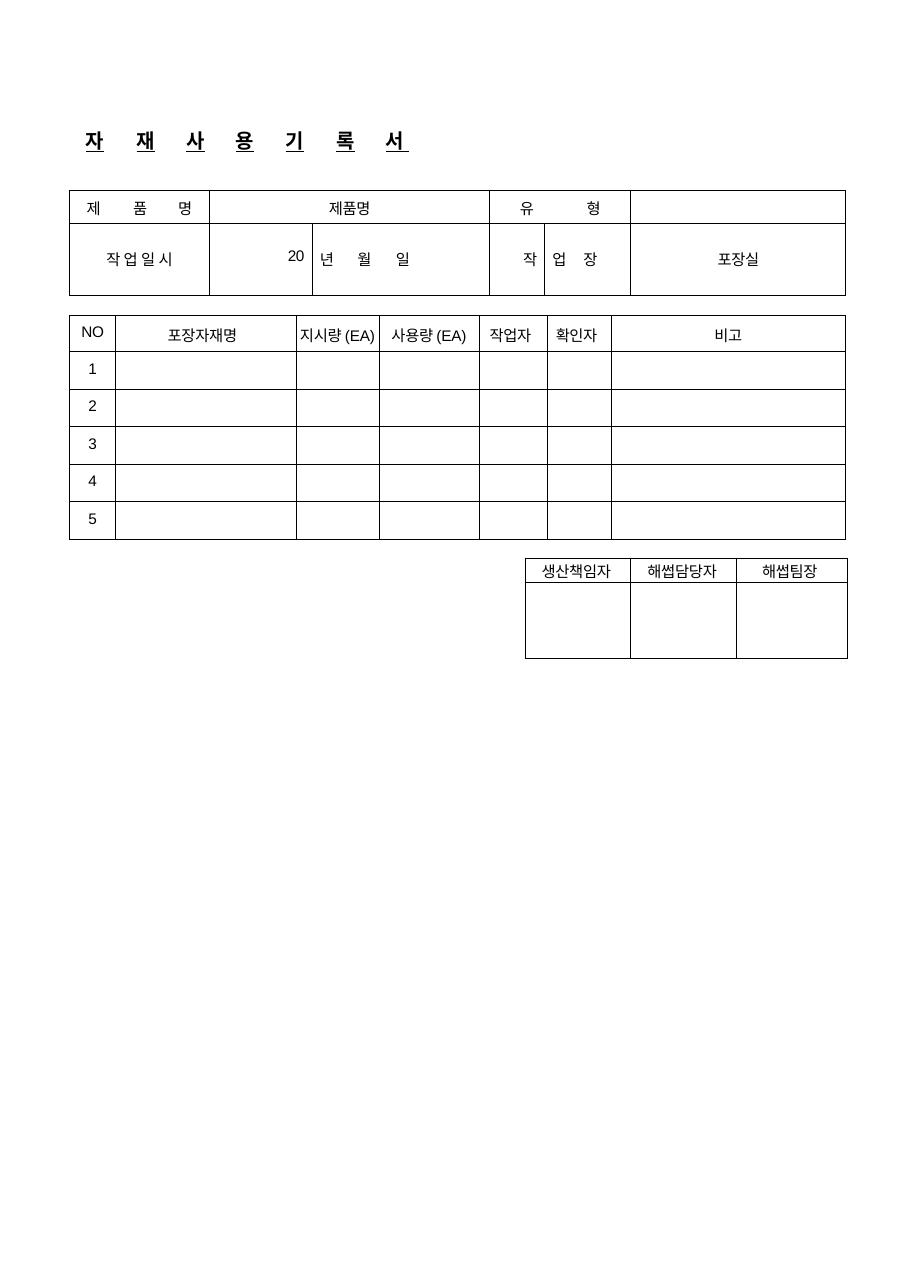
from dataclasses import dataclass

from lxml.etree import SubElement
from pptx import Presentation
from pptx.dml.color import RGBColor
from pptx.enum.text import MSO_AUTO_SIZE as AutoSize, PP_ALIGN as Align
from pptx.oxml import parse_xml
from pptx.oxml.ns import nsdecls, qn
from pptx.util import Emu, Pt

PX = 9144  # 100 px to the inch
LATIN, KOREAN = "Arial", "Noto Sans CJK KR"
BLACK = "000000"


def px(length):
    return Emu(length * PX)


def colour(value):
    return RGBColor.from_string(value)


@dataclass
class Label:
    """Text of a cell; "|" separates runs, and indent is on the aligned side."""
    text: str = ""
    align: Align = Align.CENTER
    indent: int = 0
    spacing: float = -0.2
    tabs: tuple = ()


def left(text, indent, spacing=-0.5):
    return Label(text, Align.LEFT, indent, spacing)


def right(text, indent, spacing=-0.5):
    return Label(text, Align.RIGHT, indent, spacing)


class Form:
    def __init__(self, width, height):
        self.deck = Presentation()
        self.deck.slide_width, self.deck.slide_height = px(width), px(height)
        self.page = self.deck.slides.add_slide(self.deck.slide_layouts[6])

    def style_span(self, span, size, spacing, bold=None, underline=None):
        font = span.font
        font.size, font.bold, font.underline = Pt(size), bold, underline
        font.color.rgb = colour(BLACK)
        font.name = LATIN if span.text.strip() and span.text.isascii() else KOREAN
        properties = font._element
        properties.set("spc", str(round(spacing * 100)))
        SubElement(properties, qn("a:ea")).set("typeface", KOREAN)

    def set_tabs(self, para, stops):
        tab_list = SubElement(para._p.get_or_add_pPr(), qn("a:tabLst"))
        for stop in stops:
            tab = SubElement(tab_list, qn("a:tab"))
            tab.set("pos", str(px(stop)))
            tab.set("algn", "l")

    def add_title(self, at, letters, stops):
        box = self.page.shapes.add_textbox(*map(px, at))
        frame = box.text_frame
        frame.word_wrap, frame.auto_size = True, AutoSize.SHAPE_TO_FIT_TEXT
        frame.margin_left = frame.margin_top = px(1)
        frame.margin_right = frame.margin_bottom = 0
        para = frame.paragraphs[0]
        self.set_tabs(para, stops)
        for part in "|\t|".join(letters).split("|") + [" "]:
            span = para.add_run()
            span.text = part
            spacing = {"\t": 0, " ": 5}.get(part, -0.5)
            self.style_span(span, 13, spacing, True, part != "\t")

    def fill_cell(self, cell, label, top):
        cell.margin_left = px(label.indent if label.align == Align.LEFT else 0)
        cell.margin_right = px(label.indent if label.align == Align.RIGHT else 0)
        cell.margin_top, cell.margin_bottom = px(top), 0
        para = cell.text_frame.paragraphs[0]
        if not label.text:
            SubElement(para._p, qn("a:endParaRPr")).set("sz", "1000")
            return
        para.alignment = label.align
        if label.tabs:
            self.set_tabs(para, label.tabs)
        for part in label.text.split("|"):
            span = para.add_run()
            span.text = part
            self.style_span(span, 10, label.spacing)

    def set_borders(self, cell, weight, hidden_sides):
        properties = cell._tc.get_or_add_tcPr()
        for index, side in enumerate("LRTB"):
            paint = ("<a:noFill/>" if side in hidden_sides else
                     f'<a:solidFill><a:srgbClr val="{BLACK}"/></a:solidFill>')
            properties.insert(index, parse_xml(
                f'<a:ln{side} {nsdecls("a")} w="{Pt(weight)}">{paint}</a:ln{side}>'))

    def add_grid(self, corner, widths, heights, rows, tops, weight=0.5,
                 merges=(), open_right=()):
        """open_right lists the (row, column) cells with no line on their right."""
        size = sum(widths), sum(heights)
        table = self.page.shapes.add_table(
            len(heights), len(widths), *map(px, (*corner, *size))).table
        table.first_row = table.horz_banding = False
        for column, width in zip(table.columns, widths):
            column.width = px(width)
        for row, height in zip(table.rows, heights):
            row.height = px(height)
        for first, last in merges:
            table.cell(*first).merge(table.cell(*last))
        for r, (labels, top) in enumerate(zip(rows, tops)):
            for c, label in enumerate(labels):
                cell = table.cell(r, c)
                cell.fill.background()
                self.fill_cell(cell, label, top)
                hidden = "R" * ((r, c) in open_right) + "L" * ((r, c - 1) in open_right)
                self.set_borders(cell, weight, hidden)


def main():
    form = Form(826, 1168)
    form.add_title((77, 116, 300, 24), "자재사용기록서", (46, 91, 136, 181, 227, 272))

    blank = Label()
    product = [Label("제\t품\t명", spacing=-0.5, tabs=(42, 83)), Label("제품명"),
               blank, blank, blank, right("유", 10), blank, left("형", 10), blank]
    work = [Label("작 업 일 |시", spacing=0), right("20", 7, -0.2), left("년", 7),
            left("월", 10), left("일", 10), right("작", 7), left("업", 7),
            left("장", 7), Label("포장실")]
    form.add_grid((63, 173), (127, 93, 31, 35, 95, 50, 28, 50, 195), (30, 65),
                  [product, work], tops=(6, 22), weight=0.75,
                  merges=[((0, 1), (0, 4))],
                  open_right={(0, 5), (0, 6), (1, 2), (1, 3), (1, 6)})

    headings = [Label("NO"), left("포장자재명", 47, -0.1),
                left("지시량 |(EA)", 3, -0.1), left("사용량 |(EA)", 11, -0.1),
                left("작업자", 9, -0.2), left("확인자", 8, -0.2), Label("비고")]
    materials = [[Label(str(number), spacing=-0.5)] + [blank] * 6
                 for number in range(1, 6)]
    form.add_grid((63, 286), (42, 164, 75, 91, 61, 58, 213), [33] + [34] * 5,
                  [headings] + materials, tops=[8] * 6)

    approvers = [left("생산책임자", 15, -0.1), left("해썹담당자", 15, -0.1),
                 left("해썹팀장", 23, -0.2)]
    form.add_grid((476, 506), (96, 96, 100), (22, 69),
                  [approvers, [blank] * 3], tops=(2, 2))
    form.deck.save("out.pptx")


if __name__ == "__main__":
    main()
